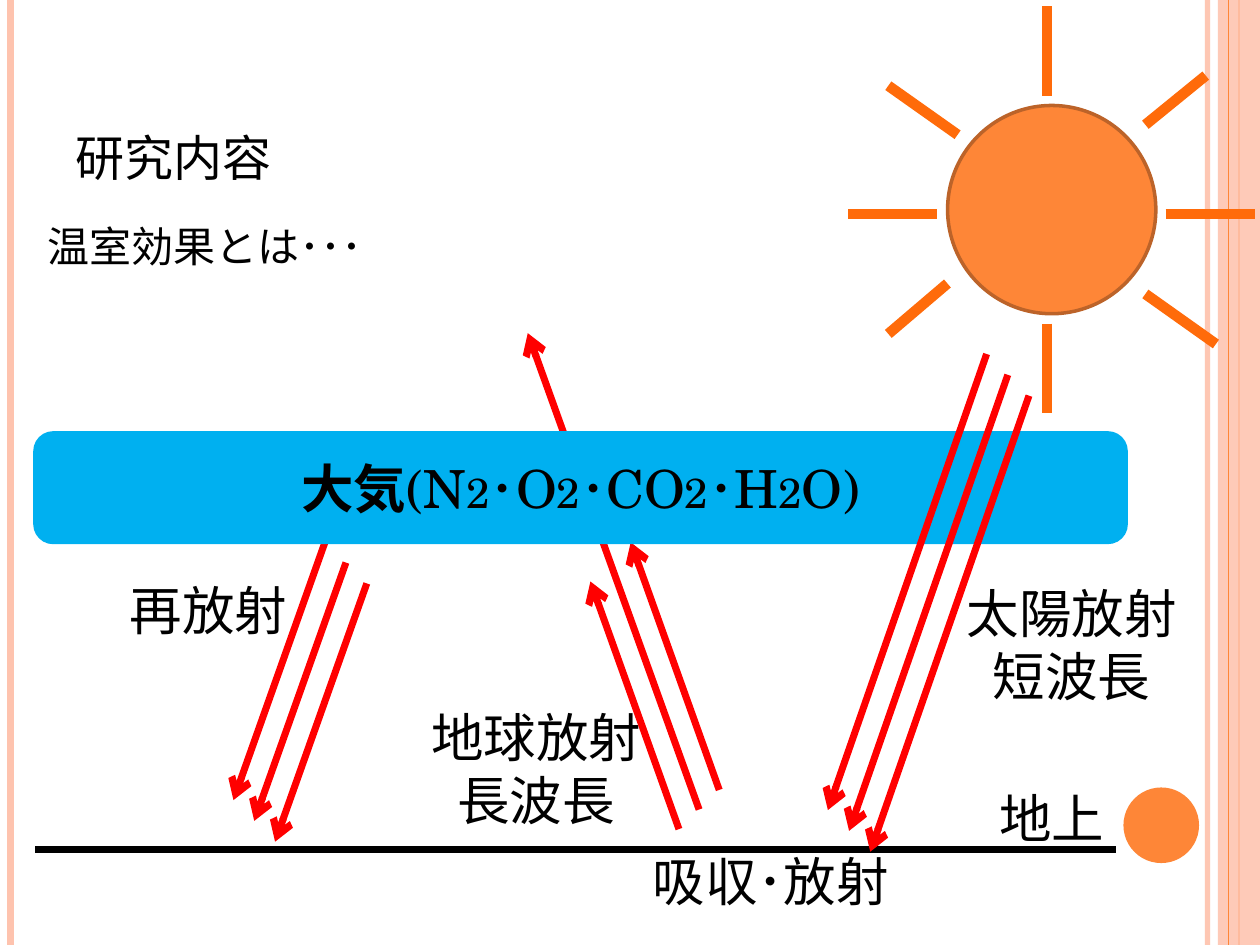
"""Builds a slide that explains the greenhouse effect with radiation arrows."""
from dataclasses import dataclass

from lxml.etree import SubElement
from pptx import Presentation
from pptx.dml.color import RGBColor
from pptx.enum.shapes import MSO_CONNECTOR, MSO_SHAPE
from pptx.enum.text import MSO_ANCHOR, PP_ALIGN
from pptx.oxml.ns import qn
from pptx.util import Pt

FONT = "TeX Gyre Schola"
BLACK, ORANGE, PINK, RAY, RED, SKY = "000000", "FE8637", "FEC3AE", "FF6B0A", "FF0000", "00B0F0"


@dataclass(frozen=True)
class Line:
    x1: float
    y1: float
    x2: float
    y2: float
    color: str
    width: float
    alpha: int = 100
    arrow: bool = False


@dataclass(frozen=True)
class Bundle:
    x: float
    y: float
    step: tuple[float, float]
    vectors: tuple[tuple[float, float], ...]


@dataclass(frozen=True)
class Label:
    text: str
    left: float
    top: float
    width: float
    height: float
    size: float = 30
    align: PP_ALIGN = PP_ALIGN.CENTER
    anchor: MSO_ANCHOR = MSO_ANCHOR.TOP
    small_caps: bool = False
    before: float = 0


FRAME_LINES = [
    Line(690, 0, 690, 540, PINK, 3, alpha=93),
    Line(6, 0, 6, 540, PINK, 4.5),
    Line(708, 0, 708, 540, ORANGE, 1.5),
]
FRAME_EDGE = Line(702, 0, 702, 540, ORANGE, 0.75)
HEADINGS = [
    Label("研究内容", 36, 21.6, 588, 90, 35, PP_ALIGN.LEFT, MSO_ANCHOR.BOTTOM, True),
    Label("温室効果とは･･･", 20, 122.4, 689, 34, 24, PP_ALIGN.LEFT, before=6),
]
SUN_RAYS = [
    (507.6, 49, 547.2, 77), (654.5, 168, 694.8, 196.6),
    (598.3, 3.6, 598.3, 54.7), (598.3, 185, 598.3, 236.2),
    (507.6, 190.8, 541.4, 162), (654.5, 71.3, 689, 43.2),
    (484.6, 122.4, 535.7, 122.4), (666, 122.4, 717.1, 122.4),
]
GROUND = Line(20.2, 485.3, 637.9, 485.3, BLACK, 4)
LABELS = [
    Label("地上", 563.8, 445.7, 79.2, 44, align=PP_ALIGN.LEFT),
    Label("吸収･放射", 365.8, 481.7, 153.4, 44, align=PP_ALIGN.LEFT),
    Label("太陽放射\n短波長", 535.7, 328.3, 153.4, 80),
    Label("地球放射\n長波長", 229.7, 399.6, 153.4, 80),
    Label("再放射", 42.5, 326.9, 153.4, 44),
]
EARTH_RADIATION = Bundle(388, 473.8, (11.5, -11.2), ((-50.6, -141.5), (-97.9, -272.2), (-50.6, -141.5)))
RERADIATION = Bundle(185.8, 309.6, (11.9, 11.9), ((-52.4, 147.6),) * 3)
SOLAR_RADIATION = Bundle(563.8, 202.3, (12.1, 11.9), ((-90.7, 260.6),) * 3)
GASES = ["(N", "2", "･O", "2", "･CO", "2", "･H", "2", "O)"]


def paint(target, color: str, alpha: int = 100) -> None:
    """Apply a solid colour, given as hex, to a fill."""
    target.solid()
    target.fore_color.rgb = RGBColor.from_string(color)
    if alpha < 100:
        value = target._xPr.find(qn("a:solidFill"))[0]
        SubElement(value, qn("a:alpha")).set("val", str(alpha * 1000))


def draw_line(page, line: Line) -> None:
    """Draw a straight line, with an open arrowhead on request."""
    connector = page.shapes.add_connector(
        MSO_CONNECTOR.STRAIGHT, Pt(line.x1), Pt(line.y1), Pt(line.x2), Pt(line.y2))
    connector.line.width = Pt(line.width)
    paint(connector.line.fill, line.color, line.alpha)
    if line.arrow:
        SubElement(connector.line._get_or_add_ln(), qn("a:tailEnd")).set("type", "arrow")
    SubElement(connector._element.spPr, qn("a:effectLst"))


def draw_bundle(page, bundle: Bundle) -> None:
    """Draw evenly staggered radiation arrows."""
    for index, (run, rise) in enumerate(bundle.vectors):
        x = bundle.x + index * bundle.step[0]
        y = bundle.y + index * bundle.step[1]
        draw_line(page, Line(x, y, x + run, y + rise, RED, 4, arrow=True))


def draw_shape(page, kind: MSO_SHAPE, left: float, top: float, width: float, height: float,
               color: str, alpha: int = 100, outline: str = ""):
    """Draw a filled preset shape and return it."""
    shape = page.shapes.add_shape(kind, Pt(left), Pt(top), Pt(width), Pt(height))
    shape.shadow.inherit = False
    paint(shape.fill, color, alpha)
    if outline:
        paint(shape.line.fill, outline)
        shape.line.width = Pt(2)
    else:
        shape.line.fill.background()
    return shape


def add_span(para, text: str, *, size: float = 30, bold: bool = False, small_caps: bool = False) -> None:
    """Append a formatted run to a paragraph."""
    span = para.add_run()
    span.text = text
    span.font.name = FONT
    span.font.size = Pt(size)
    span.font.bold = bold
    paint(span.font.fill, BLACK)
    if small_caps:
        span.font._element.set("cap", "small")


def draw_label(page, label: Label) -> None:
    """Draw a text box with one paragraph per line of text."""
    box = page.shapes.add_textbox(Pt(label.left), Pt(label.top), Pt(label.width), Pt(label.height))
    frame = box.text_frame
    frame.word_wrap = True
    frame.vertical_anchor = label.anchor
    for index, text in enumerate(label.text.split("\n")):
        para = frame.add_paragraph() if index else frame.paragraphs[0]
        para.alignment = label.align
        para.space_before = Pt(label.before)
        add_span(para, text, size=label.size, small_caps=label.small_caps)


def draw_atmosphere(page) -> None:
    """Draw the blue band that names the gases of the atmosphere."""
    band = draw_shape(page, MSO_SHAPE.ROUNDED_RECTANGLE, 20, 247.4, 623.5, 62.6, SKY, outline=SKY)
    band.text_frame.vertical_anchor = MSO_ANCHOR.MIDDLE
    para = band.text_frame.paragraphs[0]
    para.alignment = PP_ALIGN.CENTER
    add_span(para, "大気", bold=True)
    for text in GASES:
        add_span(para, text, size=24 if text == "2" else 30)


def main() -> None:
    """Build and save the deck."""
    deck = Presentation()
    deck.slide_width, deck.slide_height = Pt(720), Pt(540)
    page = deck.slides.add_slide(deck.slide_layouts[6])
    for line in FRAME_LINES:
        draw_line(page, line)
    draw_shape(page, MSO_SHAPE.RECTANGLE, 696, 0, 24, 540, PINK, alpha=87)
    draw_line(page, FRAME_EDGE)
    draw_shape(page, MSO_SHAPE.OVAL, 642, 450, 43.2, 43.2, ORANGE)
    for label in HEADINGS:
        draw_label(page, label)
    draw_shape(page, MSO_SHAPE.OVAL, 541.5, 60.3, 119, 119, ORANGE, outline="BC6329")
    for ray in SUN_RAYS:
        draw_line(page, Line(*ray, RAY, 6))
    draw_line(page, GROUND)
    for label in LABELS:
        draw_label(page, label)
    draw_bundle(page, EARTH_RADIATION)
    draw_bundle(page, RERADIATION)
    draw_atmosphere(page)
    draw_bundle(page, SOLAR_RADIATION)
    deck.save("out.pptx")


if __name__ == "__main__":
    main()
